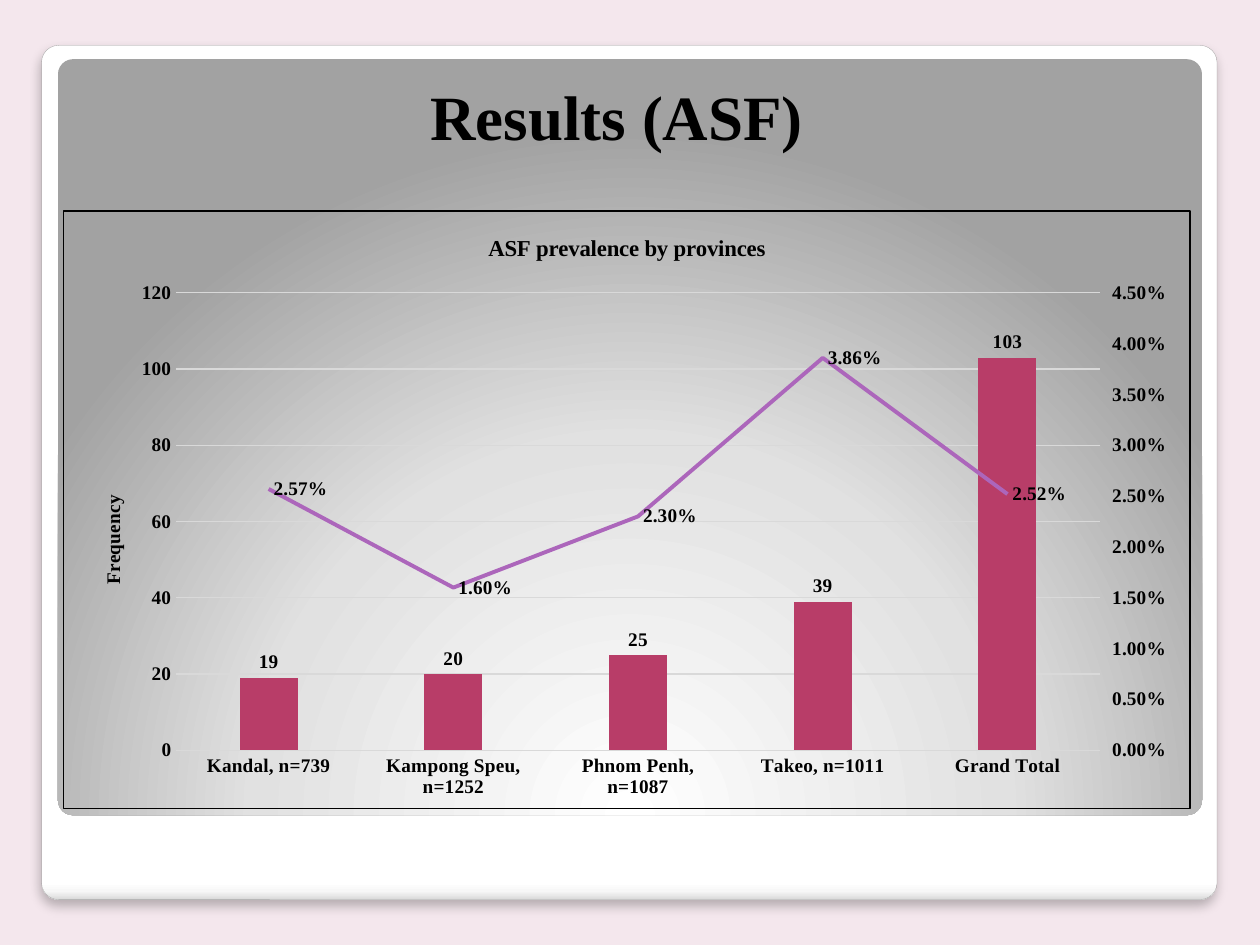
from copy import deepcopy
from lxml.etree import SubElement
from pptx import Presentation
from pptx.chart.axis import ValueAxis
from pptx.chart.data import CategoryChartData
from pptx.dml.color import RGBColor
from pptx.enum.chart import XL_CHART_TYPE, XL_LABEL_POSITION, XL_MARKER_STYLE, XL_TICK_MARK
from pptx.enum.shapes import MSO_SHAPE
from pptx.enum.text import MSO_ANCHOR, PP_ALIGN
from pptx.oxml import parse_xml
from pptx.oxml.ns import nsdecls, qn
from pptx.util import Inches, Pt

TITLE = "Results (ASF)"
HEAD = "ASF prevalence by provinces"
CASES = [
    ("Kandal, n=739", 19, 0.0257),
    ("Kampong Speu, n=1252", 20, 0.016),
    ("Phnom Penh, n=1087", 25, 0.023),
    ("Takeo, n=1011", 39, 0.0386),
    ("Grand Total", 103, 0.0252),
]
FACE, BLACK, GRID = "Times New Roman", "000000", "D9D9D9"
ROSE, VIOLET = "B83D68", "AC66BB"
CARD = [(0, "FFFFFF"), (98, "FFFFFF"), (99, "F7F7F7"), (100, "DADADA")]
PANEL = [(0, "FFFFFF"), (55, "E1E1E1"), (100, "A2A2A2")]
DOWN = '<a:lin ang="5400000" scaled="0"/>'
GLOW = ('<a:path path="circle"><a:fillToRect l="50000" t="175000" '
        'r="50000" b="-75000"/></a:path>')


def color(code):
    return RGBColor.from_string(code)


def set_font(font, size=11):
    font.name, font.size, font.bold = FACE, Pt(size), True
    font.color.rgb = color(BLACK)


def write(frame, text, size=11, align=PP_ALIGN.CENTER):
    frame.text = text
    para = frame.paragraphs[0]
    para.alignment = align
    set_font(para.runs[0].font, size)


def set_line(line, code, width):
    line.color.rgb = color(code)
    line.width = Pt(width)


def add_round(slide, box, stops, way):
    """Add a rounded box with a gradient running the given way."""
    shape = slide.shapes.add_shape(MSO_SHAPE.ROUNDED_RECTANGLE, *map(Inches, box))
    shape.adjustments[0] = 0.02
    shape.shadow.inherit = False
    shape.line.fill.background()
    marks = "".join(f'<a:gs pos="{pos * 1000}"><a:srgbClr val="{code}"/></a:gs>'
                    for pos, code in stops)
    fill = parse_xml(f'<a:gradFill {nsdecls("a")} rotWithShape="1">'
                     f'<a:gsLst>{marks}</a:gsLst>{way}</a:gradFill>')
    shape.element.spPr.find(qn("a:prstGeom")).addnext(fill)
    return shape


def place(item, **vals):
    """Set a manual layout on a plot area or a chart title."""
    old = item.find(qn("c:layout"))
    if old is not None:
        item.remove(old)
    layout = parse_xml(f'<c:layout {nsdecls("c")}><c:manualLayout/></c:layout>')
    for key, val in vals.items():
        SubElement(layout[0], qn(f"c:{key}")).set("val", str(val))
    text = item.find(qn("c:tx"))
    if text is None:
        item.insert(0, layout)
    else:
        text.addnext(layout)


def set_val(node, **vals):
    for key, val in vals.items():
        node.find(qn(f"c:{key}")).set("val", val)


def split_line(chart):
    """Move the second series to a line plot on a right-hand axis."""
    area = chart.element.chart.plotArea
    bar = area.find(qn("c:barChart"))
    series = bar.findall(qn("c:ser"))[1]
    flip = series.find(qn("c:invertIfNegative"))
    if flip is not None:
        series.remove(flip)
    line = parse_xml(f'<c:lineChart {nsdecls("c")}><c:grouping val="standard"/>'
                     '<c:varyColors val="0"/><c:marker val="1"/>'
                     '<c:axId val="501"/><c:axId val="502"/></c:lineChart>')
    line.insert(2, series)
    bar.addnext(line)

    cat, val = area.find(qn("c:catAx")), area.find(qn("c:valAx"))
    right, under = deepcopy(val), deepcopy(cat)
    val.addnext(right)
    right.addnext(under)
    set_val(under, axId="501", crossAx="502", delete="1")
    set_val(right, axId="502", crossAx="501", axPos="r", crosses="max")
    return ValueAxis(right)


def add_chart(slide):
    data = CategoryChartData()
    names, counts, rates = zip(*CASES)
    data.categories = names
    data.add_series("Series 1", counts)
    data.add_series("Series 2", rates, number_format="0.00%")
    frame = slide.shapes.add_chart(XL_CHART_TYPE.COLUMN_CLUSTERED, Inches(0.5),
                                   Inches(1.67), Inches(8.95), Inches(4.75), data)
    chart = frame.chart
    set_font(chart.font)
    chart.has_legend = False
    chart.has_title = True
    write(chart.chart_title.text_frame, HEAD, size=13)

    cat, val = chart.category_axis, chart.value_axis
    for axis in (cat, val):
        axis.major_tick_mark = axis.minor_tick_mark = XL_TICK_MARK.NONE
        set_font(axis.tick_labels.font)
    set_line(cat.format.line, GRID, 0.75)
    val.format.line.fill.background()
    val.minimum_scale, val.maximum_scale, val.major_unit = 0, 120, 20

    right = split_line(chart)
    right.has_major_gridlines = False
    right.major_tick_mark = XL_TICK_MARK.CROSS
    right.minimum_scale, right.maximum_scale, right.major_unit = 0, 0.045, 0.005
    right.tick_labels.number_format = "0.00%"
    right.tick_labels.number_format_is_linked = False

    val.has_major_gridlines = True
    set_line(val.major_gridlines.format.line, GRID, 0.75)
    write(val.axis_title.text_frame, "Frequency")
    val.axis_title.text_frame._txBody.bodyPr.set("rot", "-5400000")
    place(val.axis_title._element, xMode="edge", yMode="edge", x=0.03, y=0.47)
    place(chart.element.chart.plotArea, layoutTarget="inner", xMode="edge",
          yMode="edge", x=0.1, y=0.137, w=0.82, h=0.766)

    bars, trend = chart.plots
    bars.gap_width = 219
    bars.vary_by_categories = False
    count, rate = bars.series[0], trend.series[0]
    count.format.fill.solid()
    count.format.fill.fore_color.rgb = color(ROSE)
    set_line(rate.format.line, VIOLET, 2.25)
    rate.smooth = False
    rate.marker.style = XL_MARKER_STYLE.NONE
    for series, spot, form in ((count, XL_LABEL_POSITION.OUTSIDE_END, "0"),
                               (rate, XL_LABEL_POSITION.RIGHT, "0.00%")):
        labels = series.data_labels
        labels.show_value = True
        labels.position = spot
        labels.number_format, labels.number_format_is_linked = form, False
        set_font(labels.font)

    chart.element.chart.addnext(parse_xml(
        f'<c:spPr {nsdecls("c", "a")}><a:noFill/><a:ln w="9525"><a:solidFill>'
        f'<a:srgbClr val="{BLACK}"/></a:solidFill></a:ln></c:spPr>'))


def main():
    deck = Presentation()
    deck.slide_width, deck.slide_height = Inches(10), Inches(7.5)
    slide = deck.slides.add_slide(deck.slide_layouts[5])
    slide.background.fill.solid()
    slide.background.fill.fore_color.rgb = color("F4E7ED")

    card = add_round(slide, (0.33, 0.36, 9.33, 6.78), CARD, DOWN)
    set_line(card.line, "A4A4A4", 0.16)
    card.element.spPr.find(qn("a:effectLst")).append(parse_xml(
        f'<a:outerShdw {nsdecls("a")} blurRad="76200" dist="50800" dir="5400000" '
        f'rotWithShape="0"><a:srgbClr val="{BLACK}"><a:alpha val="25000"/>'
        '</a:srgbClr></a:outerShdw>'))
    add_round(slide, (0.46, 0.47, 9.08, 6), PANEL, GLOW)

    title = slide.shapes.title
    title.left, title.top = Inches(0.42), Inches(0.5)
    title.width, title.height = Inches(8.95), Inches(0.83)
    title.text_frame.vertical_anchor = MSO_ANCHOR.MIDDLE
    write(title.text_frame, TITLE, size=36)
    slide.shapes.element.append(title.element)  # bring in front of the panel
    add_chart(slide)
    deck.save("out.pptx")


if __name__ == "__main__":
    main()
